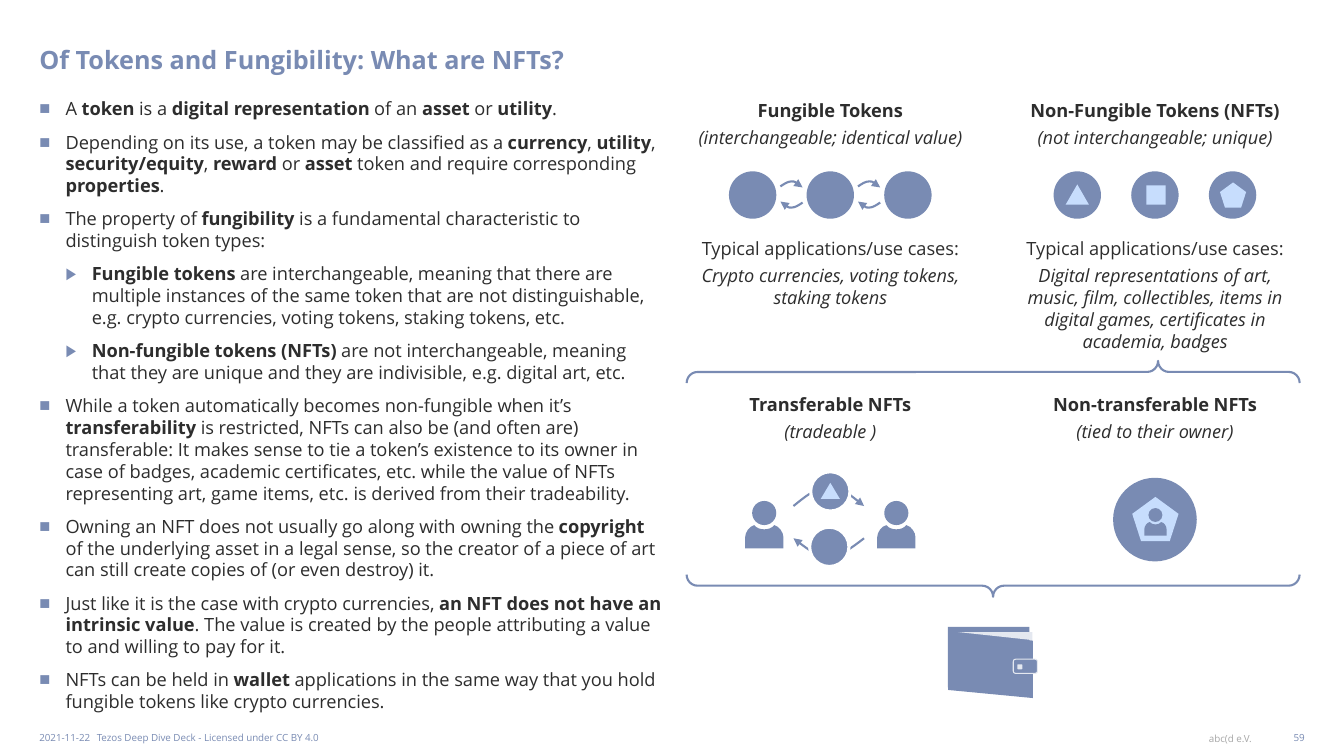
from lxml import etree
from pptx import Presentation
from pptx.dml.color import RGBColor
from pptx.enum.shapes import MSO_SHAPE
from pptx.enum.text import MSO_ANCHOR, MSO_AUTO_SIZE, PP_ALIGN
from pptx.oxml.ns import qn
from pptx.util import Inches, Pt

OVAL, RECT, ROUND = MSO_SHAPE.OVAL, MSO_SHAPE.RECTANGLE, MSO_SHAPE.ROUNDED_RECTANGLE
TRIANGLE, PENTAGON = MSO_SHAPE.ISOSCELES_TRIANGLE, MSO_SHAPE.REGULAR_PENTAGON
BRACE, PARALLELOGRAM = MSO_SHAPE.LEFT_BRACE, MSO_SHAPE.PARALLELOGRAM
LEFT, CENTER, RIGHT = PP_ALIGN.LEFT, PP_ALIGN.CENTER, PP_ALIGN.RIGHT
TOP, MIDDLE, BOTTOM = MSO_ANCHOR.TOP, MSO_ANCHOR.MIDDLE, MSO_ANCHOR.BOTTOM

FONT = "Open Sans"
BLUE, PALE, MIST, INK, GRAY, WHITE = "798BB3", "C7DDFD", "E4E8F0", "2D2D2D", "A6A6A6", "FFFFFF"

POINTS = [
    (0, "A **token** is a **digital representation** of an **asset **or **utility**."),
    (0, "Depending on its use, a token may be classified as a **currency**, **utility**, "
        "**security/equity**, **reward** or **asset** token and require corresponding **properties**."),
    (0, "The property of **fungibility** is a fundamental characteristic to distinguish token types:"),
    (1, "**Fungible tokens** are interchangeable, meaning that there are multiple instances of the "
        "same token that are not distinguishable, e.g. crypto currencies, voting tokens, staking tokens, etc."),
    (1, "**Non-fungible tokens (NFTs)** are not interchangeable, meaning that they are unique and "
        "they are indivisible, e.g. digital art, etc."),
    (0, "While a token automatically becomes non-fungible when it’s **transferability** is restricted, "
        "NFTs can also be (and often are) transferable: It makes sense to tie a token’s existence to its "
        "owner in case of badges, academic certificates, etc. while the value of NFTs representing art, "
        "game items, etc. is derived from their tradeability."),
    (0, "Owning an NFT does not usually go along with owning the **copyright** of the underlying asset "
        "in a legal sense, so the creator of a piece of art can still create copies of (or even destroy) it."),
    (0, "Just like it is the case with crypto currencies, **an NFT does not have an intrinsic value**. "
        "The value is created by the people attributing a value to and willing to pay for it."),
    (0, "NFTs can be held in **wallet** applications in the same way that you hold fungible tokens "
        "like crypto currencies."),
]
FUNGIBLE_X, UNIQUE_X, COLUMN_W = 6.81, 10.03, 2.85
HEADINGS = [
    (FUNGIBLE_X, 0.97, "Fungible Tokens", "(interchangeable; identical value)"),
    (UNIQUE_X, 0.97, "Non-Fungible Tokens (NFTs)", "(not interchangeable; unique)"),
    (FUNGIBLE_X, 3.89, "Transferable NFTs", "(tradeable )"),
    (UNIQUE_X, 3.89, "Non-transferable NFTs", "(tied to their owner)"),
]
USE_CASES = [
    (FUNGIBLE_X, "Crypto currencies, voting tokens, staking tokens"),
    (UNIQUE_X, "Digital representations of art, music, film, collectibles, items in digital games, "
               "certificates in academia, badges"),
]
# Outline of the shoulders, in units of the person's width
SHOULDERS_START = (0.24, 0.63)
SHOULDERS = [
    [(0.11, 0.66), (0, 0.82), (0, 0.95)],
    [(0, 1.24)], [(1, 1.24)], [(1, 0.95)],
    [(1, 0.82), (0.89, 0.66), (0.76, 0.63)],
    [(0.7, 0.71), (0.6, 0.74), (0.5, 0.74)],
    [(0.4, 0.74), (0.3, 0.71), (0.24, 0.63)],
]


def color(value):
    return RGBColor.from_string(value)


def write(frame, text, size=13, ink=INK, bold=False, italic=False, align=LEFT,
          before=0, after=0, spacing=None, level=None):
    """Add a paragraph; ** switches bold, and a level makes it a list item."""
    first = not frame.paragraphs[0].runs
    paragraph = frame.paragraphs[0] if first else frame.add_paragraph()
    if level is not None:
        paragraph.level = level
        props = paragraph._p.get_or_add_pPr()
        props.set("marL", str(Inches((0.26, 0.52)[level])))
        props.set("indent", str(Inches(-0.26)))
        etree.SubElement(etree.SubElement(props, qn("a:buClr")), qn("a:srgbClr"), val=BLUE)
        etree.SubElement(props, qn("a:buSzPct"), val=("100000", "90000")[level])
        etree.SubElement(props, qn("a:buChar"), char="■▶"[level])
    paragraph.alignment = align
    paragraph.space_before, paragraph.space_after = Pt(0 if first else before), Pt(after)
    if spacing:
        paragraph.line_spacing = spacing
    for index, part in enumerate(text.split("**")):
        if part:
            run = paragraph.add_run()
            run.text = part
            font = run.font
            font.name, font.size, font.color.rgb = FONT, Pt(size), color(ink)
            font.bold, font.italic = bold or index % 2 == 1, italic


class TokenSlide:
    def __init__(self, deck):
        self.slide = deck.slides.add_slide(deck.slide_layouts[1])
        self.shapes = self.slide.shapes

    def frame(self, holder, box, anchor=TOP, insets=(0, 0, 0, 0), wrap=True):
        holder.left, holder.top, holder.width, holder.height = map(Inches, box)
        frame = holder.text_frame
        frame.auto_size, frame.word_wrap, frame.vertical_anchor = MSO_AUTO_SIZE.NONE, wrap, anchor
        frame.margin_left, frame.margin_top, frame.margin_right, frame.margin_bottom = map(Inches, insets)
        return frame

    def text_box(self, box, **layout):
        return self.frame(self.shapes.add_textbox(*map(Inches, box)), box, **layout)

    def paint(self, shape, fill=None, line=None, width=1.5):
        shape.shadow.inherit = False
        if fill:
            shape.fill.solid()
            shape.fill.fore_color.rgb = color(fill)
        else:
            shape.fill.background()
        if line:
            shape.line.color.rgb, shape.line.width = color(line), Pt(width)
        else:
            shape.line.fill.background()

    def preset(self, kind, box, fill=BLUE, line=None, width=1.5, turn=0, adjust=()):
        shape = self.shapes.add_shape(kind, *map(Inches, box))
        shape.rotation = turn
        for index, value in enumerate(adjust):
            shape.adjustments[index] = value
        self.paint(shape, fill, line, width)

    def outline(self, start, pieces, close):
        """Freeform whose pieces are lines (one point) or cubic curves (three points)."""
        builder = self.shapes.build_freeform(*map(Inches, start))
        builder.add_line_segments([(Inches(x), Inches(y)) for piece in pieces for x, y in piece], close=close)
        shape = builder.convert_to_shape()
        segments = iter(list(shape._element.iter(qn("a:lnTo"))))
        for piece in pieces:
            steps = [next(segments) for _ in piece]
            if len(steps) == 3:
                curve = etree.Element(qn("a:cubicBezTo"))
                steps[0].addprevious(curve)
                for step in steps:
                    curve.append(step[0])
                    step.getparent().remove(step)
        return shape

    def arc(self, start, end, peak):
        """Flat arrow from start to end whose middle lies at height peak."""
        (x1, y1), (x2, y2) = start, end
        mid, pull = (x1 + x2) / 2, (x2 - x1) / 6
        shape = self.outline(start, [
            [(x1 + pull, (y1 + peak) / 2), (mid - pull, peak), (mid, peak)],
            [(mid + pull, peak), (x2 - pull, (y2 + peak) / 2), end],
        ], False)
        self.paint(shape, line=BLUE)
        etree.SubElement(shape.line._get_or_add_ln(), qn("a:tailEnd"), type="triangle")

    def person(self, left, top, width):
        start, *pieces = [[(left + x * width, top + y * width) for x, y in piece]
                          for piece in [[SHOULDERS_START], *SHOULDERS]]
        self.paint(self.outline(start[0], pieces, True), BLUE)
        self.preset(OVAL, (left + 0.185 * width, top, 0.63 * width, 0.63 * width))


def main():
    deck = Presentation()
    deck.slide_width, deck.slide_height = Inches(13.33), Inches(7.5)
    page = TokenSlide(deck)
    title, body = page.slide.placeholders

    write(page.frame(title, (0.39, 0.28, 11.81, 0.46), BOTTOM, (0, 0.08, 0, 0)),
          "Of Tokens and Fungibility: What are NFTs?", size=18, ink=BLUE, bold=True, spacing=0.9)
    points = page.frame(body, (0.39, 0.97, 6.18, 6.14))
    for level, text in POINTS:
        write(points, text, level=level, before=6, after=2)

    for box, text, ink, align, wrap in [
        ((0.39, 7.2, 0.54, 0.24), "2021-11-22", BLUE, LEFT, False),
        ((0.96, 7.2, 5.48, 0.24), "Tezos Deep Dive Deck - Licensed under CC BY 4.0", BLUE, LEFT, True),
        ((11.99, 7.26, 0.45, 0.13), "abc(d e.V.", GRAY, LEFT, True),
        ((12.54, 7.2, 0.4, 0.24), "59", BLUE, RIGHT, True),
    ]:
        write(page.text_box(box, anchor=MIDDLE, wrap=wrap), text, size=7, ink=ink, align=align)

    column = dict(align=CENTER, before=3, after=1)
    side_insets = (0.08, 0, 0.08, 0)
    for x, y, heading, remark in HEADINGS:
        frame = page.text_box((x, y, COLUMN_W, 0.51), anchor=MIDDLE, insets=side_insets)
        write(frame, heading, bold=True, **column)
        write(frame, remark, italic=True, **column)
    for x, examples in USE_CASES:
        frame = page.text_box((x, 2.35, COLUMN_W, 1.23), insets=side_insets)
        write(frame, "Typical applications/use cases:", **column)
        write(frame, examples, italic=True, **column)

    for row_x in (7.23, 10.45):
        for index in range(3):
            page.preset(OVAL, (row_x + 0.77 * index, 1.7, 0.47, 0.47))
    page.preset(TRIANGLE, (10.57, 1.83, 0.23, 0.2), PALE)
    page.preset(RECT, (11.37, 1.84, 0.19, 0.19), PALE)
    page.preset(PENTAGON, (12.1, 1.81, 0.26, 0.25), PALE)
    for x in (7.74, 8.51):
        page.arc((x, 1.85), (x + 0.22, 1.86), 1.8)
        page.arc((x + 0.22, 2.01), (x, 2), 2.06)

    for y, turn, tip in ((0.65, 90, 0.231), (2.77, 270, 0.5)):
        page.preset(BRACE, (9.74, y, 0.22, 6.08), None, BLUE, turn=turn, adjust=(0.491, tip))

    for x in (7.39, 8.7):
        page.person(x, 4.97, 0.38)
    page.arc((7.87, 5.02), (8.57, 5.02), 4.83)
    page.arc((8.57, 5.34), (7.87, 5.34), 5.52)
    for x, y in ((8.03, 5.23), (8.04, 4.68)):
        page.preset(OVAL, (x, y, 0.39, 0.39), line=WHITE, width=2.25)
    page.preset(TRIANGLE, (8.14, 4.79, 0.19, 0.16), PALE)

    page.preset(OVAL, (11.04, 4.74, 0.83, 0.83))
    page.preset(PENTAGON, (11.23, 4.93, 0.46, 0.44), PALE)
    page.person(11.35, 5.04, 0.22)

    # Wallet
    page.preset(RECT, (9.4, 6.22, 0.81, 0.6))
    page.preset(PARALLELOGRAM, (9.5, 6.18, 0.65, 0.84), turn=90, adjust=(0.123,))
    page.preset(ROUND, (10.05, 6.54, 0.24, 0.14), line=MIST, width=0.75)
    page.preset(ROUND, (10.09, 6.59, 0.05, 0.05), MIST)
    page.preset(TRIANGLE, (9.83, 5.94, 0.08, 0.74), MIST, turn=270, adjust=(1,))

    deck.save("out.pptx")


if __name__ == "__main__":
    main()
